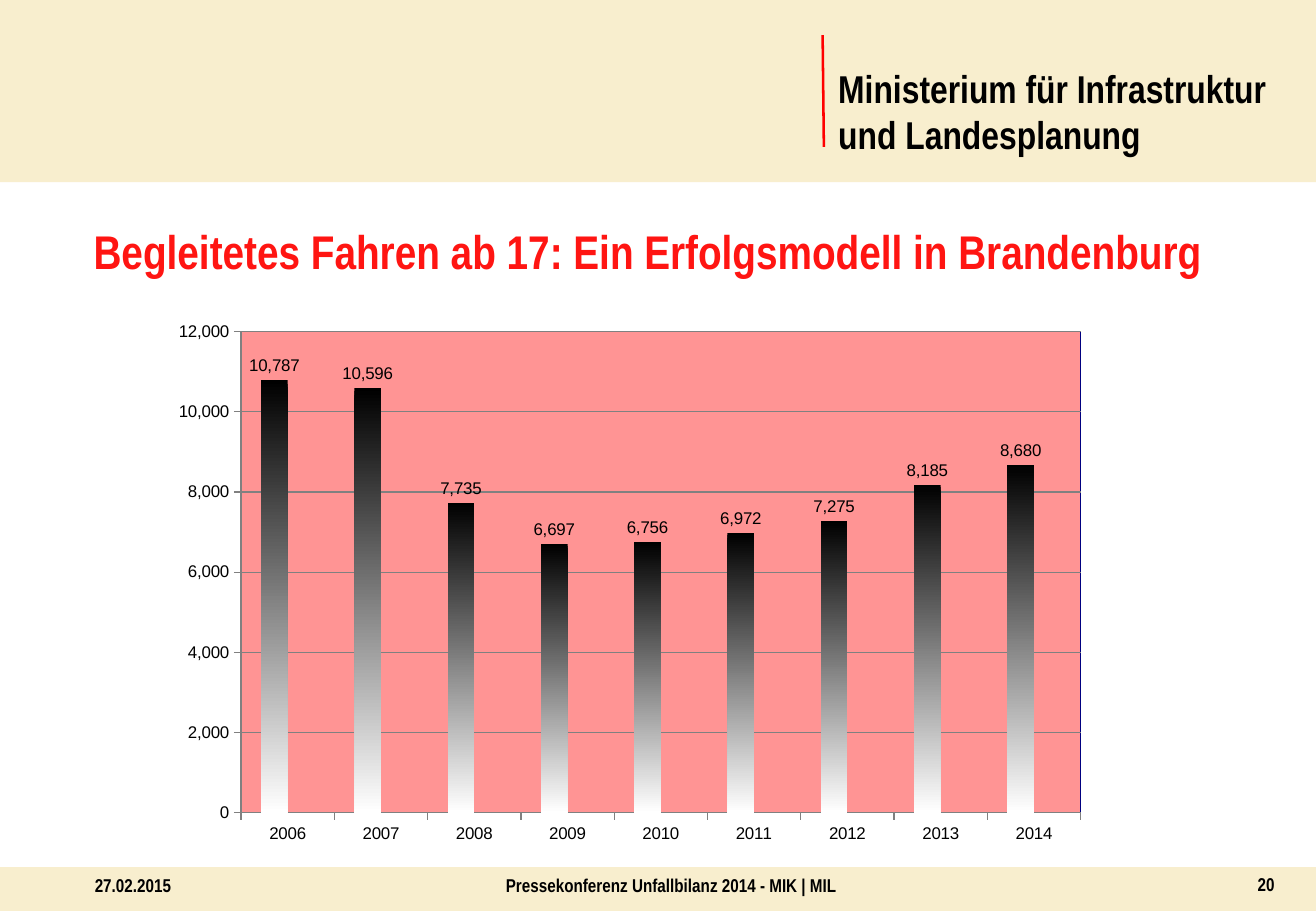
from dataclasses import dataclass

from pptx import Presentation
from pptx import oxml
from pptx.chart import data as chart_data
from pptx.dml.color import RGBColor
from pptx.enum import chart as ch, shapes, text
from pptx.oxml import ns
from pptx.util import Inches, Pt


@dataclass(frozen=True)
class Theme:
    heading_font: str = "Arial Narrow"
    chart_font: str = "Arial"
    band: str = "E6BE3F"
    band_alpha: int = 25
    rule: str = "FF0000"
    title: str = "FF1512"
    ink: str = "000000"
    bar_end: str = "FFFFFF"
    empty_series: str = "333399"
    plot: str = "FF0000"
    plot_alpha: int = 42
    plot_border: str = "000080"
    grid: str = "808080"
    title_size: int = 28
    ministry_size: int = 23
    footer_size: int = 11
    chart_size: int = 10


THEME = Theme()
SLIDE_W, SLIDE_H = 10.83, 7.5
YEARS = [str(year) for year in range(2006, 2015)]
DRIVERS = [10787, 10596, 7735, 6697, 6756, 6972, 7275, 8185, 8680]


def rgb(value):
    return RGBColor.from_string(value)


def style(paragraph, size, color, bold=True):
    paragraph.font.name = THEME.heading_font
    paragraph.font.size = Pt(size)
    paragraph.font.bold = bold
    paragraph.font.color.rgb = rgb(color)


def add_band(slide, left, top, width, height):
    band = slide.shapes.add_shape(
        shapes.MSO_SHAPE.RECTANGLE, *map(Inches, (left, top, width, height)))
    band.shadow.inherit = False
    band.fill.solid()
    band.fill.fore_color.rgb = rgb(THEME.band)
    color = band.fill._xPr.find(".//" + ns.qn("a:srgbClr"))
    color.append(oxml.parse_xml(
        f'<a:alpha {ns.nsdecls("a")} val="{THEME.band_alpha * 1000}"/>'))
    band.line.fill.background()


def add_text(slide, box, lines, size, align=text.PP_ALIGN.LEFT,
             anchor=text.MSO_ANCHOR.MIDDLE, inset=0, spacing=None):
    frame = slide.shapes.add_textbox(*map(Inches, box)).text_frame
    frame.word_wrap = True
    frame.vertical_anchor = anchor
    frame.margin_left = frame.margin_right = Inches(inset)
    frame.margin_top = frame.margin_bottom = Inches(inset / 2)
    frame.text = "\n".join(lines)
    for paragraph in frame.paragraphs:
        paragraph.alignment = align
        if spacing:
            paragraph.line_spacing = Pt(spacing)
        style(paragraph, size, THEME.ink)


def add_header(slide, left, top, width, height):
    add_band(slide, left, top, width, height)
    # Red rule beside the ministry name
    rule = slide.shapes.add_connector(
        shapes.MSO_CONNECTOR.STRAIGHT, Inches(left + 6.77), Inches(top + 0.29),
        Inches(left + 6.78), Inches(top + 1.21))
    rule.line.color.rgb = rgb(THEME.rule)
    rule.line.width = Pt(1.5)
    rule._element.spPr.append(oxml.parse_xml(f'<a:effectLst {ns.nsdecls("a")}/>'))
    add_text(slide, (left + 6.8, top + 0.48, 3.83, 0.87),
             ["Ministerium für Infrastruktur", "und Landesplanung"],
             THEME.ministry_size, anchor=text.MSO_ANCHOR.TOP,
             inset=0.1, spacing=27.6)


def add_title(slide, left, top, width, height):
    title = slide.shapes.title
    title.left, title.top, title.width, title.height = map(
        Inches, (left, top, width, height))
    frame = title.text_frame
    frame.text = "Begleitetes Fahren ab 17: Ein Erfolgsmodell in Brandenburg"
    frame.auto_size = text.MSO_AUTO_SIZE.NONE
    frame.vertical_anchor = text.MSO_ANCHOR.TOP
    frame.margin_left = frame.margin_right = Inches(0.09)
    frame.margin_top = frame.margin_bottom = Inches(0.05)
    frame.paragraphs[0].alignment = text.PP_ALIGN.LEFT
    style(frame.paragraphs[0], THEME.title_size, THEME.title)


def format_plot_area(chart):
    """Fix the inner plot rectangle and give it a translucent fill."""
    plot_area = chart._chartSpace.chart.plotArea
    for layout in plot_area.findall(ns.qn("c:layout")):
        plot_area.remove(layout)
    place = "".join(f'<c:{key} val="{value}"/>' for key, value in (
        ("layoutTarget", "inner"), ("xMode", "edge"), ("yMode", "edge"),
        ("x", 0.086), ("y", 0.036), ("w", 0.895), ("h", 0.886)))
    plot_area.insert(0, oxml.parse_xml(
        f'<c:layout {ns.nsdecls("c")}><c:manualLayout>{place}'
        '</c:manualLayout></c:layout>'))
    plot_area.append(oxml.parse_xml(
        f'<c:spPr {ns.nsdecls("c", "a")}><a:solidFill>'
        f'<a:srgbClr val="{THEME.plot}"><a:alpha val="{THEME.plot_alpha * 1000}"/>'
        '</a:srgbClr></a:solidFill><a:ln w="9525"><a:solidFill>'
        f'<a:srgbClr val="{THEME.plot_border}"/></a:solidFill></a:ln></c:spPr>'))


def add_drivers_chart(slide, left, top, width, height):
    drivers = chart_data.CategoryChartData(number_format="#,##0")
    drivers.categories = YEARS
    drivers.add_series("Series 1", DRIVERS)
    drivers.add_series("Series 2", [None] * len(YEARS))
    chart = slide.shapes.add_chart(
        ch.XL_CHART_TYPE.COLUMN_CLUSTERED,
        *map(Inches, (left, top, width, height)), drivers).chart
    chart.has_legend = False
    chart.has_title = False
    chart.font.name = THEME.chart_font
    chart.font.size = Pt(THEME.chart_size)
    chart.font.color.rgb = rgb(THEME.ink)
    format_plot_area(chart)

    # Axes
    values = chart.value_axis
    values.minimum_scale, values.maximum_scale, values.major_unit = 0, 12000, 2000
    values.tick_labels.number_format = "#,##0"
    values.tick_labels.number_format_is_linked = False
    values.has_major_gridlines = True
    for axis in (chart.category_axis, values):
        axis.major_tick_mark = ch.XL_TICK_MARK.OUTSIDE
    for part in (chart.category_axis, values, values.major_gridlines):
        part.format.line.color.rgb = rgb(THEME.grid)
        part.format.line.width = Pt(0.75)

    # Columns
    plot = chart.plots[0]
    plot.gap_width, plot.overlap, plot.vary_by_categories = 150, 0, False
    counted, empty = plot.series
    fill = counted.format.fill
    fill.gradient()
    fill.gradient_angle = 270
    for stop, color, position in zip(
            fill.gradient_stops, (THEME.ink, THEME.bar_end), (0, 1)):
        stop.color.rgb = rgb(color)
        stop.position = position
    empty.format.fill.solid()
    empty.format.fill.fore_color.rgb = rgb(THEME.empty_series)
    labels = counted.data_labels
    labels.show_value = True
    labels.number_format = "#,##0"
    labels.number_format_is_linked = False
    labels.position = ch.XL_LABEL_POSITION.OUTSIDE_END


def add_footer(slide, left, top, width, height):
    add_band(slide, left, top, width, height)
    size = THEME.footer_size
    add_text(slide, (left + 0.78, top, 2.55, 0.29), ["27.02.2015"], size)
    add_text(slide, (left + 3.7, top, 3.65, 0.29),
             ["Pressekonferenz Unfallbilanz 2014 - MIK | MIL"], size,
             align=text.PP_ALIGN.CENTER)
    add_text(slide, (left + 8.05, top, 2.53, height), ["20"], size,
             align=text.PP_ALIGN.RIGHT, anchor=text.MSO_ANCHOR.TOP, inset=0.09)


def main():
    deck = Presentation()
    deck.slide_width, deck.slide_height = Inches(SLIDE_W), Inches(SLIDE_H)
    slide = deck.slides.add_slide(deck.slide_layouts[5])
    add_header(slide, 0, 0, SLIDE_W, 1.5)
    add_title(slide, 0.68, 1.78, 10.15, 0.56)
    add_drivers_chart(slide, 1.32, 2.57, 7.72, 4.47)
    add_footer(slide, 0, 7.14, SLIDE_W, 0.36)
    deck.save("out.pptx")


if __name__ == "__main__":
    main()
